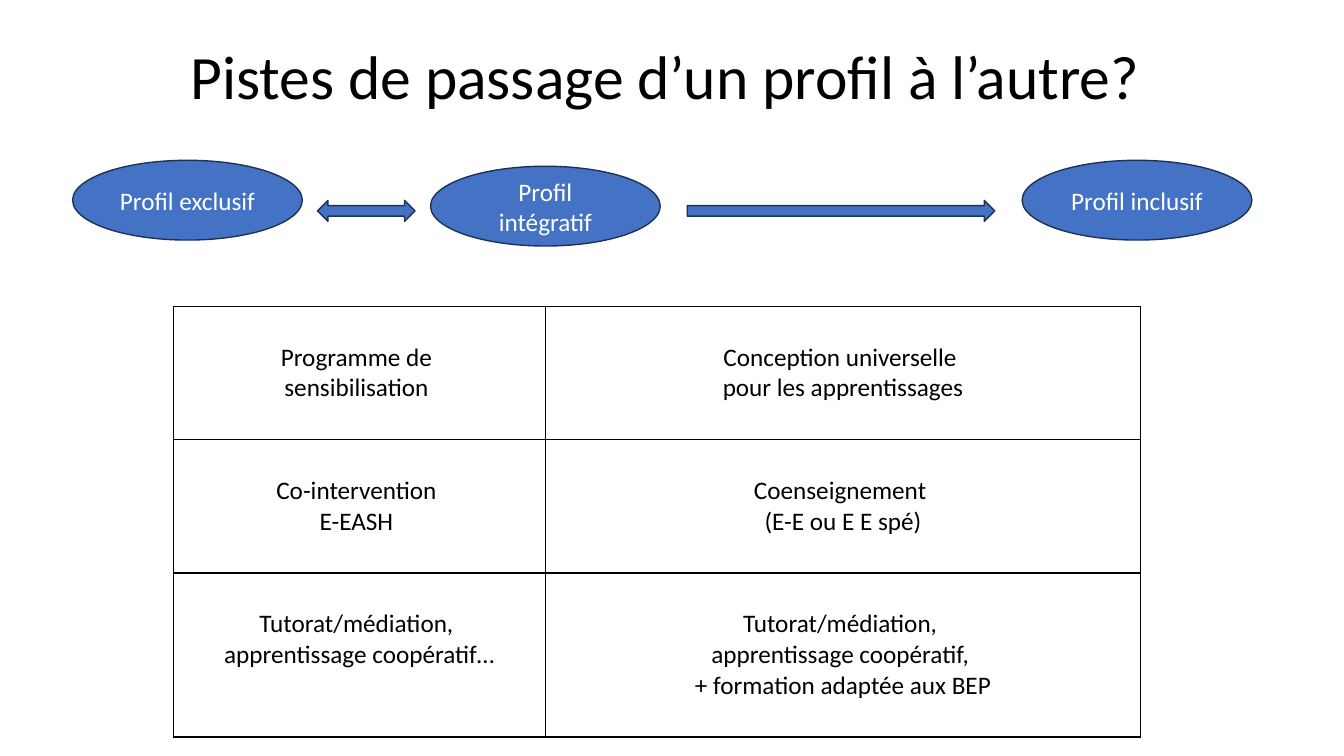
from lxml.etree import SubElement
from pptx import Presentation
from pptx.dml.color import RGBColor
from pptx.enum.shapes import MSO_SHAPE as Preset
from pptx.enum.text import MSO_ANCHOR as Anchor, PP_ALIGN as Align
from pptx.oxml.ns import qn
from pptx.util import Cm, Pt

HEADING = "Pistes de passage d’un profil à l’autre? "
PROFILES = [
    ("Profil exclusif", 1.83, 4.04),
    ("Profil intégratif", 10.85, 4.19),
    ("Profil inclusif", 25.76, 4.04),
]
PASSAGES = [
    (Preset.LEFT_RIGHT_ARROW, 8.0, 2.46),
    (Preset.RIGHT_ARROW, 17.32, 7.75),
]
PRACTICES = [
    (["Programme de ", "sensibilisation "],
     ["Conception universelle ", "pour les apprentissages"]),
    (["Co-intervention ", "E-EASH "],
     ["Coenseignement ", "(E-E ou E E spé)"]),
    (["Tutorat/médiation, ", "apprentissage coopératif…"],
     ["Tutorat/médiation, ", "apprentissage coopératif, ", "+ formation adaptée aux BEP"]),
]
COLUMN_WIDTHS = [9.37, 15.01]
ROW_HEIGHTS = [3.36, 3.36, 4.13]
BLUE, NAVY, BLACK, WHITE = "4472C4", "1E3256", "000000", "FFFFFF"


def color(value):
    return RGBColor.from_string(value)


def write(frame, lines, size=18, ink=BLACK, spacing=None):
    frame.word_wrap = True
    for number, line in enumerate(lines):
        paragraph = frame.add_paragraph() if number else frame.paragraphs[0]
        paragraph.alignment = Align.CENTER
        if spacing:
            paragraph.line_spacing = spacing
        run = paragraph.add_run()
        run.text = line
        run.font.name = "Calibri"
        run.font.size = Pt(size)
        run.font.color.rgb = color(ink)


def draw(slide, preset, left, top, width, height):
    shape = slide.shapes.add_shape(preset, Cm(left), Cm(top), Cm(width), Cm(height))
    shape.shadow.inherit = False
    shape.fill.solid()
    shape.fill.fore_color.rgb = color(BLUE)
    shape.line.color.rgb = color(NAVY)
    shape.line.width = Pt(1)
    return shape


def outline(cell):
    properties = cell._tc.get_or_add_tcPr()
    for side in ("a:lnL", "a:lnR", "a:lnT", "a:lnB"):
        border = SubElement(properties, qn(side), w=str(Pt(1)))
        fill = SubElement(border, qn("a:solidFill"))
        SubElement(fill, qn("a:srgbClr"), val=BLACK)


def main():
    deck = Presentation()
    deck.slide_width, deck.slide_height = Cm(33.87), Cm(19.05)
    slide = deck.slides.add_slide(deck.slide_layouts[6])

    heading = slide.shapes.add_textbox(Cm(2.34), Cm(1), Cm(29.21), Cm(2)).text_frame
    heading.vertical_anchor = Anchor.MIDDLE
    write(heading, [HEADING], size=44, spacing=0.9)

    practices = slide.shapes.add_table(
        len(ROW_HEIGHTS), len(COLUMN_WIDTHS), Cm(4.37), Cm(7.72),
        Cm(sum(COLUMN_WIDTHS)), Cm(sum(ROW_HEIGHTS))).table
    practices.first_row = practices.horz_banding = False
    for column, width in zip(practices.columns, COLUMN_WIDTHS):
        column.width = Cm(width)
    for row, height, entries in zip(practices.rows, ROW_HEIGHTS, PRACTICES):
        row.height = Cm(height)
        for cell, lines in zip(row.cells, entries):
            outline(cell)
            cell.fill.background()
            cell.margin_top = Cm(0.9)
            write(cell.text_frame, lines)

    for label, left, top in PROFILES:
        profile = draw(slide, Preset.OVAL, left, top, 5.79, 2.01).text_frame
        profile.vertical_anchor = Anchor.MIDDLE
        write(profile, [label], ink=WHITE)
    for preset, left, width in PASSAGES:
        draw(slide, preset, left, 5.05, width, 0.53)

    deck.save("out.pptx")


if __name__ == "__main__":
    main()
